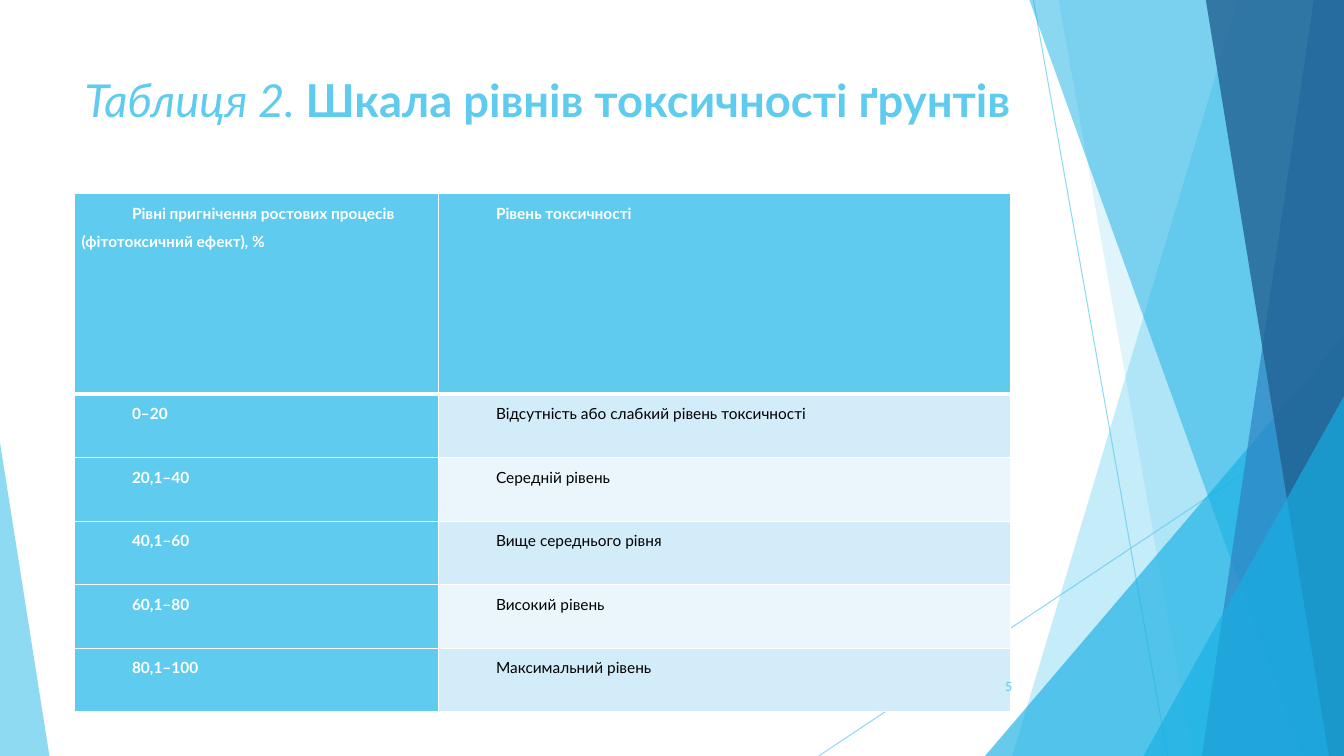
from dataclasses import dataclass

from lxml import etree
from pptx import Presentation
from pptx.dml.color import RGBColor
from pptx.enum.shapes import MSO_CONNECTOR, MSO_SHAPE
from pptx.enum.text import MSO_ANCHOR, PP_ALIGN
from pptx.oxml.ns import qn
from pptx.util import Inches, Pt

STRAIGHT = MSO_CONNECTOR.STRAIGHT
TRIANGLE = MSO_SHAPE.ISOSCELES_TRIANGLE
TOP, MIDDLE = MSO_ANCHOR.TOP, MSO_ANCHOR.MIDDLE
LEFT, RIGHT = PP_ALIGN.LEFT, PP_ALIGN.RIGHT


@dataclass(frozen=True)
class Theme:
    """Colours, font and type sizes of the slide."""
    font: str = "Lato"
    sky: str = "5FCBEF"
    cyan: str = "17B0E4"
    blue: str = "2E83C3"
    navy: str = "226292"
    white: str = "FFFFFF"
    black: str = "000000"
    bands: tuple = ("D2ECF9", "EAF6FC")
    title_size: float = 32.4
    table_size: float = 11
    number_size: float = 9


THEME = Theme()
PAGE = (0, 0, 13.33, 7.5)
ROWS = [
    ("Рівні пригнічення ростових процесів (фітотоксичний ефект), %", "Рівень токсичності"),
    ("0–20", "Відсутність або слабкий рівень токсичності"),
    ("20,1–40", "Середній рівень"),
    ("40,1–60", "Вище середнього рівня"),
    ("60,1–80", "Високий рівень"),
    ("80,1–100", "Максимальний рівень"),
]


def set_opacity(shape, percent):
    """Make the first colour of a shape partly transparent."""
    colour = next(shape._element.spPr.iter(qn("a:srgbClr")))
    etree.SubElement(colour, qn("a:alpha")).set("val", str(percent * 1000))


def paint(shape, colour, percent):
    """Give a shape a translucent fill with no line or shadow."""
    shape.shadow.inherit = False
    shape.fill.solid()
    shape.fill.fore_color.rgb = RGBColor.from_string(colour)
    shape.line.fill.background()
    set_opacity(shape, percent)


def add_ray(slide, start, end):
    """Draw one thin translucent line."""
    ray = slide.shapes.add_connector(STRAIGHT, *map(Inches, start + end))
    ray.line.color.rgb = RGBColor.from_string(THEME.sky)
    ray.line.width = Pt(0.75)
    set_opacity(ray, 70)
    etree.SubElement(ray._element.spPr, qn("a:effectLst"))


def add_facet(slide, box, top_x, bottom_x, colour, percent):
    """Draw a full-height facet between a slanted edge and the right edge."""
    left, top, width, height = box
    right, bottom = left + width, top + height
    corners = [(left + top_x, top), (right, top), (right, bottom), (left + bottom_x, bottom)]
    points = [(Inches(x), Inches(y)) for x, y in corners]
    builder = slide.shapes.build_freeform(*points[0])
    builder.add_line_segments(points[1:], close=True)
    paint(builder.convert_to_shape(), colour, percent)


def add_corner(slide, box, apex, colour, percent):
    """Draw a right triangle whose apex is at the left (0) or right (1)."""
    triangle = slide.shapes.add_shape(TRIANGLE, *map(Inches, box))
    triangle.adjustments[0] = apex
    paint(triangle, colour, percent)


def add_backdrop(slide, box):
    """Draw the rays, facets and corner triangles of the page."""
    left, top, width, height = box
    right, bottom = left + width, top + height
    add_ray(slide, (left + 10.25, top), (left + 11.58, bottom))
    add_ray(slide, (right, top + 4.03), (left + 8.12, bottom))
    add_facet(slide, box, 12.28, 10.04, THEME.sky, 36)
    add_facet(slide, box, 10.5, 11.83, THEME.sky, 20)
    add_corner(slide, (right - 3.56, bottom - 4.17, 3.56, 4.17), 1, THEME.cyan, 66)
    add_facet(slide, box, 10.21, 12.91, THEME.cyan, 50)
    add_facet(slide, box, 13.03, 11.92, THEME.blue, 70)
    add_facet(slide, box, 11.96, 13.18, THEME.navy, 80)
    add_corner(slide, (right - 1.99, bottom - 3.57, 1.99, 3.57), 1, THEME.cyan, 66)
    add_corner(slide, (left, bottom - 3.11, 0.49, 3.11), 0, THEME.sky, 70)


def add_run(paragraph, text, size, colour, bold=False, italic=False):
    """Add one formatted run to a paragraph."""
    run = paragraph.add_run()
    run.text = text
    run.font.name = THEME.font
    run.font.size = Pt(size)
    run.font.bold = bold
    run.font.italic = italic
    run.font.color.rgb = RGBColor.from_string(colour)


def add_text_box(slide, box, anchor, alignment):
    """Add a wrapping text box and return its first paragraph."""
    frame = slide.shapes.add_textbox(*map(Inches, box)).text_frame
    frame.word_wrap = True
    frame.vertical_anchor = anchor
    paragraph = frame.paragraphs[0]
    paragraph.alignment = alignment
    return paragraph


def add_title(slide, box):
    """Write the table number and the heading."""
    paragraph = add_text_box(slide, box, TOP, LEFT)
    add_run(paragraph, "Таблиця 2. ", THEME.title_size, THEME.sky, italic=True)
    add_run(paragraph, "Шкала рівнів токсичності ґрунтів", THEME.title_size, THEME.sky, bold=True)


def add_page_number(slide, box):
    """Write the page number."""
    paragraph = add_text_box(slide, box, MIDDLE, RIGHT)
    add_run(paragraph, "5", THEME.number_size, THEME.sky)


def set_borders(cell, top, bottom):
    """Draw white borders, with the given top and bottom widths in points."""
    properties = cell._tc.get_or_add_tcPr()
    for side, width in (("L", 1), ("R", 1), ("T", top), ("B", bottom)):
        line = etree.SubElement(properties, qn(f"a:ln{side}"), w=str(Pt(width)))
        fill = etree.SubElement(line, qn("a:solidFill"))
        etree.SubElement(fill, qn("a:srgbClr"), val=THEME.white)


def fill_cell(cell, text, row, column):
    """Style one cell by its place in the table and write its text."""
    heading = row == 0 or column == 0
    set_borders(cell, 3 if row == 1 else 1, 3 if row == 0 else 1)
    cell.fill.solid()
    background = THEME.sky if heading else THEME.bands[(row - 1) % 2]
    cell.fill.fore_color.rgb = RGBColor.from_string(background)
    cell.margin_left, cell.margin_top = Inches(0.07), Inches(0.01)
    cell.margin_right = cell.margin_bottom = 0
    paragraph = cell.text_frame.paragraphs[0]
    paragraph.line_spacing = 1.5
    indent = paragraph._p.get_or_add_pPr()
    indent.set("marL", "0")
    indent.set("indent", str(Inches(0.5)))
    colour = THEME.white if heading else THEME.black
    add_run(paragraph, text, THEME.table_size, colour, bold=heading)


def add_toxicity_table(slide, box):
    """Build the table of toxicity levels."""
    width, height = box[2:]
    header_height, first_width = 1.99, 3.61
    table = slide.shapes.add_table(len(ROWS), 2, *map(Inches, box)).table
    table.first_row = table.horz_banding = False
    table.columns[0].width = Inches(first_width)
    table.columns[1].width = Inches(width - first_width)
    body_height = (height - header_height) / (len(ROWS) - 1)
    for row, texts in enumerate(ROWS):
        table.rows[row].height = Inches(body_height if row else header_height)
        for column, text in enumerate(texts):
            fill_cell(table.cell(row, column), text, row, column)


def main():
    """Build and save the presentation."""
    presentation = Presentation()
    presentation.slide_width, presentation.slide_height = map(Inches, PAGE[2:])
    slide = presentation.slides.add_slide(presentation.slide_layouts[6])
    add_backdrop(slide, PAGE)
    add_title(slide, (0.74, 0.67, 9.4, 1.44))
    add_toxicity_table(slide, (0.74, 1.92, 9.28, 5.14))
    add_page_number(slide, (9.39, 6.61, 0.75, 0.4))
    presentation.save("out.pptx")


if __name__ == "__main__":
    main()
